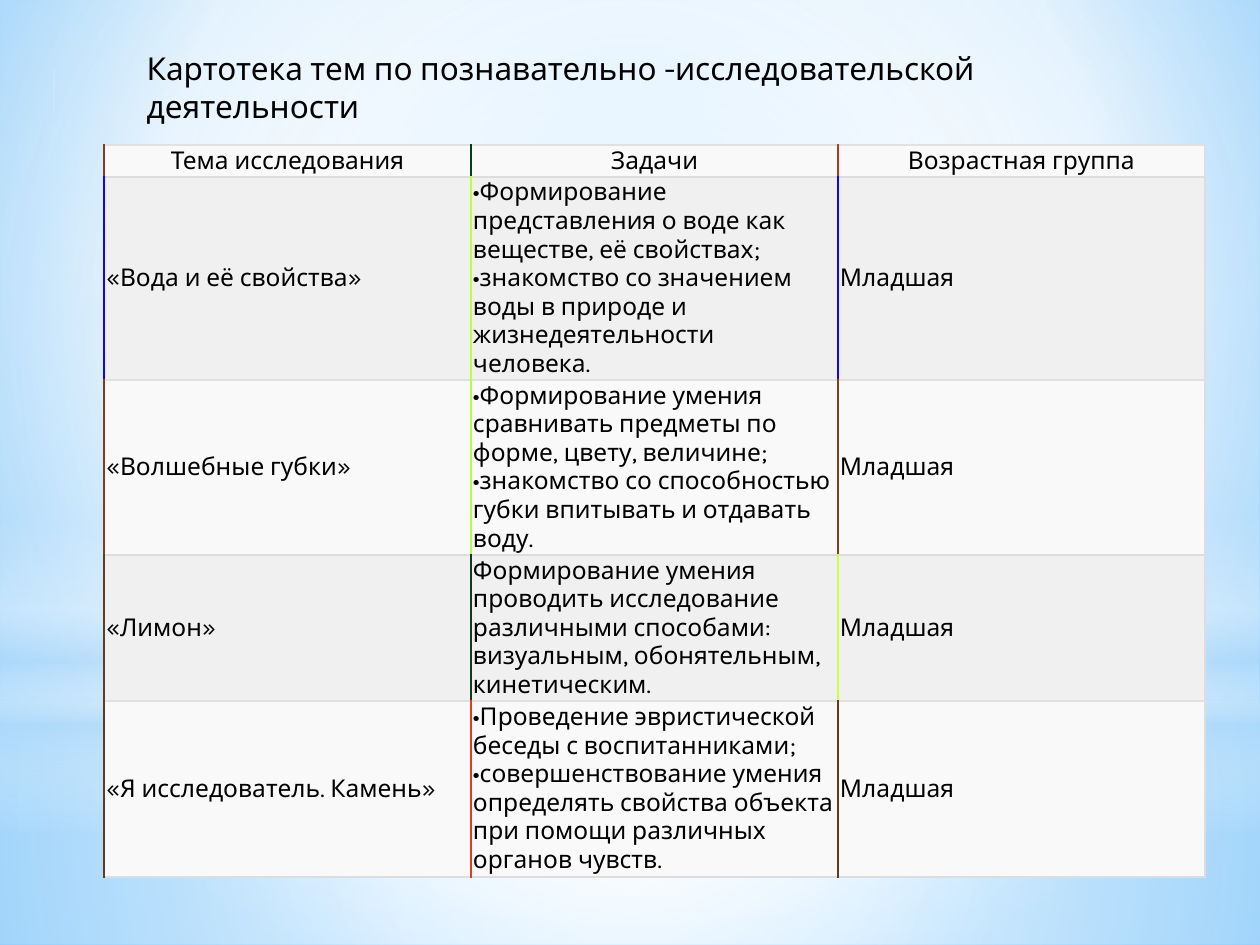
"""Build a slide with a card index of research topics for young children."""
from pptx import Presentation
from pptx.dml.color import RGBColor
from pptx.enum.shapes import MSO_SHAPE as Shape
from pptx.enum.text import MSO_ANCHOR as Anchor, MSO_AUTO_SIZE as AutoSize, PP_ALIGN as Align
from pptx.oxml import parse_xml
from pptx.oxml.ns import nsdecls, qn
from pptx.util import Emu, Pt

FONT = "Karla"
TITLE = "Картотека тем по познавательно -исследовательской деятельности"
HEADERS = ["Тема исследования", "Задачи", "Возрастная группа"]
TOPICS = [
    ("«Вода и её свойства»",
     ["Формирование представления о воде как веществе, её свойствах;",
      "знакомство со значением воды в природе и жизнедеятельности человека."],
     "Младшая"),
    ("«Волшебные губки»",
     ["Формирование умения сравнивать предметы по форме, цвету, величине;",
      "знакомство со способностью губки впитывать и отдавать воду."],
     "Младшая"),
    ("«Лимон»",
     ["Формирование умения проводить исследование различными способами: "
      "визуальным, обонятельным, кинетическим."],
     "Младшая"),
    ("«Я исследователь. Камень»",
     ["Проведение эвристической беседы с воспитанниками;",
      "совершенствование умения определять свойства объекта при помощи различных органов чувств."],
     "Младшая"),
]
ROW_HEIGHTS = [32, 203, 175, 146, 176]
COLUMN_WIDTH = 367
VERTICAL_LINES = [
    ("803E1D", "003F1D", "B03B1D", "DDDDDD"),
    ("1003F6", "C0FC46", "1003F6", "DDDDDD"),
    ("803E1D", "B0FF46", "803E1D", "DDDDDD"),
    ("603E1D", "103C1D", "D0FD46", "DDDDDD"),
    ("603B1D", "E03E1D", "603B1D", "DDDDDD"),
]
ROW_FILLS = ["F9F9F9", "F0F0F0"]
LIGHT_RULE, HEAVY_RULE = ("E1E1E1", 0.75), ("DDDDDD", 1.5)

CENTRE = (50, 50, 50, 50)
SKY_STOPS = [(0, "9ED5FF", 100), (60, "FFFFFF", 100), (100, "5BB9FF", 100)]
SKY_FOCUS = (20, 10, 20, 60)
GLOWS = [
    (Shape.RECTANGLE, (0, 703, 1260, 242), CENTRE,
     [(0, "FFFFFF", 91), (37, "FFFFFF", 76), (100, "B4DCFA", 79)]),
    (Shape.RECTANGLE, (0, 0, 1260, 703), CENTRE,
     [(0, "FFFFFF", 89), (48, "FFFFFF", 62), (100, "B4DCFA", 79)]),
    (Shape.RECTANGLE, (0, 519, 1260, 315), None,
     [(0, "FFFFFF", 0), (29, "FFFFFF", 30), (45, "B4DCFA", 40),
      (55, "FFFFFF", 26), (65, "B4DCFA", 60), (100, "FFFFFF", 0)]),
    (Shape.OVAL, (0, 220, 1260, 703), CENTRE,
     [(0, "FFFFFF", 100), (56, "FFFFFF", 0)]),
]


def px(value):
    return Emu(round(value * 914400 / 126))


def box(*lengths):
    return [px(length) for length in lengths]


def color(value):
    return RGBColor.from_string(value)


def set_gradient(fill, parent, stops, focus):
    """Fill with a radial gradient, or a vertical one when focus is None."""
    stop_xml = "".join(
        f'<a:gs pos="{position * 1000}"><a:srgbClr val="{value}">'
        f'<a:alpha val="{opacity * 1000}"/></a:srgbClr></a:gs>'
        for position, value, opacity in stops)
    if focus:
        sides = " ".join(f'{side}="{part * 1000}"' for side, part in zip("ltrb", focus))
        direction = f'<a:path path="circle"><a:fillToRect {sides}/></a:path>'
    else:
        direction = '<a:lin ang="5400000" scaled="0"/>'
    fill.solid()
    parent.replace(parent.find(qn("a:solidFill")), parse_xml(
        f'<a:gradFill {nsdecls("a")} rotWithShape="1"><a:gsLst>{stop_xml}</a:gsLst>'
        f'{direction}</a:gradFill>'))


def add_plain_shape(slide, kind, bounds):
    shape = slide.shapes.add_shape(kind, *box(*bounds))
    shape.shadow.inherit = False
    shape.line.fill.background()
    return shape


def format_paragraph(paragraph, size, align):
    paragraph.alignment = align
    paragraph.font.name = FONT
    paragraph.font.size = Pt(size)
    paragraph.font.color.rgb = color("000000")


def add_bullet(paragraph):
    properties = paragraph._p.get_or_add_pPr()
    properties.set("marL", "0")
    properties.set("indent", "0")
    for markup in (f'<a:buFont {nsdecls("a")} typeface="{FONT}"/>',
                   f'<a:buChar {nsdecls("a")} char="•"/>'):
        properties.insert_element_before(
            parse_xml(markup), "a:tabLst", "a:defRPr", "a:extLst")


def set_borders(cell, borders):
    properties = cell._tc.get_or_add_tcPr()
    for index, (side, (value, width)) in enumerate(zip("LRTB", borders)):
        properties.insert(index, parse_xml(
            f'<a:ln{side} {nsdecls("a")} w="{Pt(width)}"><a:solidFill>'
            f'<a:srgbClr val="{value}"/></a:solidFill></a:ln{side}>'))


def fill_cell(cell, lines, align, fill, borders):
    cell.text = "\n".join(lines)
    cell.vertical_anchor = Anchor.MIDDLE
    cell.margin_left = cell.margin_right = px(2)
    cell.margin_top = cell.margin_bottom = px(1)
    cell.fill.solid()
    cell.fill.fore_color.rgb = color(fill)
    set_borders(cell, borders)
    for paragraph in cell.text_frame.paragraphs:
        format_paragraph(paragraph, 14, align)
        if len(lines) > 1:
            add_bullet(paragraph)


def add_backdrop(slide):
    fill = slide.background.fill
    fill.solid()
    set_gradient(fill, slide._element.cSld.bg.bgPr, SKY_STOPS, SKY_FOCUS)
    for kind, bounds, focus, stops in GLOWS:
        glow = add_plain_shape(slide, kind, bounds)
        set_gradient(glow.fill, glow._element.spPr, stops, focus)


def add_topics_table(slide):
    rows = [[[header] for header in HEADERS]]
    rows += [[[topic], tasks, [group]] for topic, tasks, group in TOPICS]
    bounds = box(104, 145, COLUMN_WIDTH * len(HEADERS), sum(ROW_HEIGHTS))
    table = slide.shapes.add_table(len(rows), len(HEADERS), *bounds).table
    table.first_row = table.horz_banding = False
    for column in table.columns:
        column.width = px(COLUMN_WIDTH)
    for row_index, row in enumerate(rows):
        table.rows[row_index].height = px(ROW_HEIGHTS[row_index])
        shade = row_index % 2
        top, bottom = (HEAVY_RULE, LIGHT_RULE) if shade else (LIGHT_RULE, HEAVY_RULE)
        verticals = VERTICAL_LINES[row_index]
        align = Align.LEFT if row_index else Align.CENTER
        for column_index, lines in enumerate(row):
            left, right = [(value, 0.75) for value in verticals[column_index:column_index + 2]]
            fill_cell(table.cell(row_index, column_index), lines, align,
                      ROW_FILLS[shade], (left, right, top, bottom))


def place_title(slide):
    title = slide.shapes.title
    title.left, title.top, title.width, title.height = box(134, 43, 1037, 50)
    frame = title.text_frame
    frame.text = TITLE
    frame.word_wrap = True
    frame.auto_size = AutoSize.SHAPE_TO_FIT_TEXT
    frame.vertical_anchor = Anchor.TOP
    format_paragraph(frame.paragraphs[0], 18, Align.LEFT)
    slide.shapes._spTree.append(title._element)


def main():
    presentation = Presentation()
    presentation.slide_width, presentation.slide_height = box(1260, 945)
    slide = presentation.slides.add_slide(presentation.slide_layouts[5])
    add_backdrop(slide)
    add_topics_table(slide)
    marker = add_plain_shape(slide, Shape.RECTANGLE, (54, 68, 0, 44))
    marker.fill.solid()
    marker.fill.fore_color.rgb = color("FFFFFF")
    place_title(slide)
    presentation.save("out.pptx")


if __name__ == "__main__":
    main()
